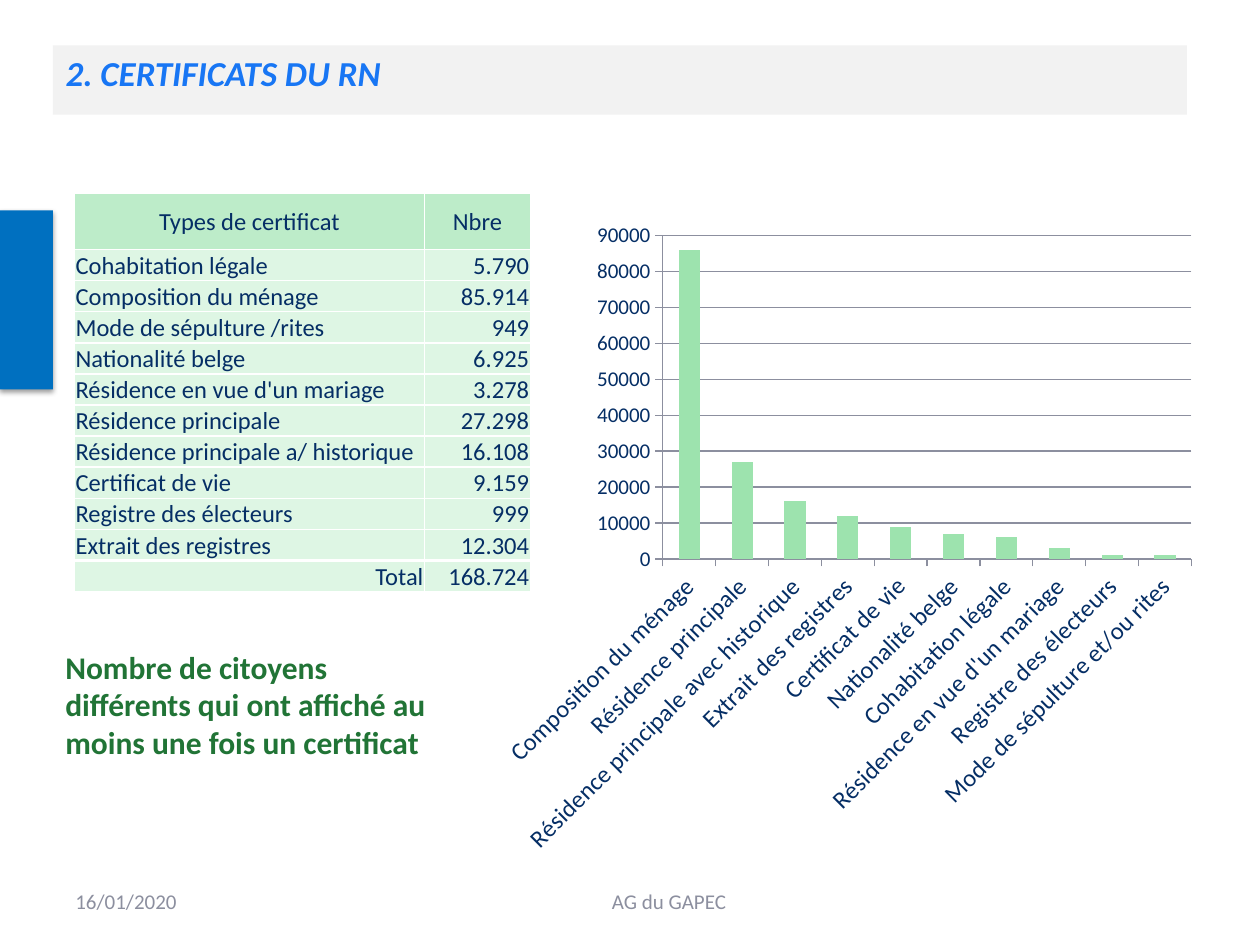
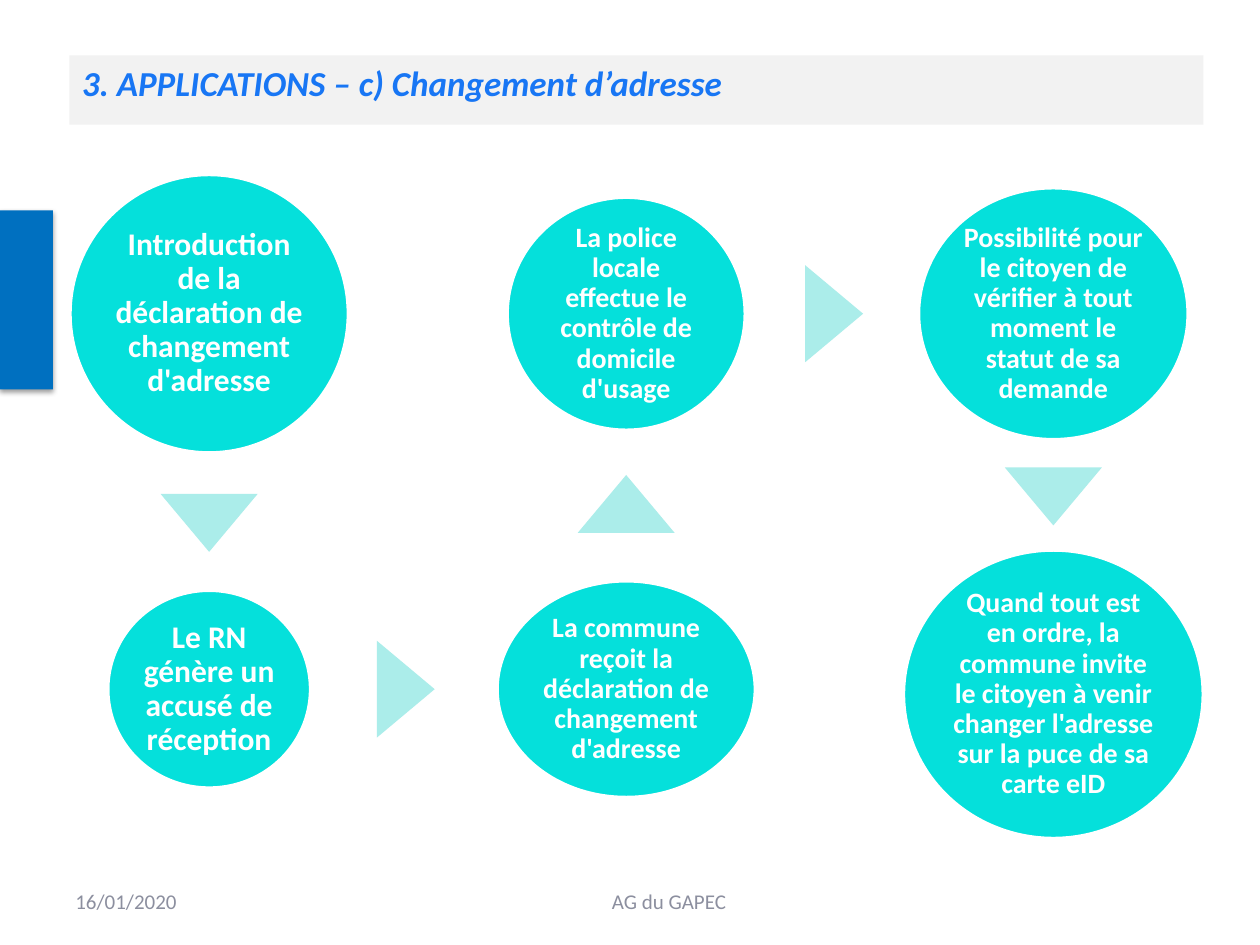
"""Builds two slides on register certificates and the change of address procedure."""
from lxml.etree import SubElement
from pptx import Presentation
from pptx.chart.data import CategoryChartData
from pptx.dml.color import RGBColor
from pptx.enum.chart import XL_CHART_TYPE, XL_TICK_MARK
from pptx.enum.shapes import MSO_SHAPE
from pptx.enum.text import MSO_ANCHOR, MSO_AUTO_SIZE, PP_ALIGN
from pptx.oxml import parse_xml
from pptx.oxml.ns import nsdecls, qn
from pptx.util import Inches, Pt

COLORS = {
    "title": "1876F4", "band": "F2F2F2", "tab": "0070C0", "footer": "8C8F9F",
    "ink": "052E65", "head": "BDECC9", "row": "DEF6E4", "bar": "9DE3AE",
    "note": "217436", "step": "05E0DB", "arrow": "ABEDEA", "white": "FFFFFF",
}
CERTIFICATES = [
    ("Cohabitation légale", "5.790"),
    ("Composition du ménage", "85.914"),
    ("Mode de sépulture /rites", "949"),
    ("Nationalité belge", "6.925"),
    ("Résidence en vue d'un mariage", "3.278"),
    ("Résidence principale", "27.298"),
    ("Résidence principale a/ historique", "16.108"),
    ("Certificat de vie", "9.159"),
    ("Registre des électeurs", "999"),
    ("Extrait des registres", "12.304"),
]
CHART_VALUES = {
    "Composition du ménage": 86000,
    "Résidence principale": 27000,
    "Résidence principale avec historique": 16000,
    "Extrait des registres": 12000,
    "Certificat de vie": 9000,
    "Nationalité belge": 7000,
    "Cohabitation légale": 6000,
    "Résidence en vue d'un mariage": 3000,
    "Registre des électeurs": 1000,
    "Mode de sépulture et/ou rites": 1000,
}
LEFT, MIDDLE, RIGHT = 1.66, 4.97, 8.36
TOP, BOTTOM = 2.49, 5.47
STEPS = [
    (LEFT, TOP, 2.21, 2.21, 18, "Introduction de la déclaration de changement d'adresse"),
    (LEFT, BOTTOM, 1.61, 1.57, 18, "Le RN génère un accusé de réception"),
    (MIDDLE, BOTTOM, 2.05, 1.72, 16, "La commune reçoit la déclaration de changement d'adresse"),
    (MIDDLE, TOP, 1.89, 1.85, 16, "La police locale effectue le contrôle de domicile d'usage"),
    (RIGHT, TOP, 2.14, 2, 16,
     "Possibilité pour le citoyen de vérifier à tout moment le statut de sa demande"),
    (RIGHT, 5.51, 2.38, 2.29, 16,
     "Quand tout est en ordre, la commune invite le citoyen à venir "
     "changer l'adresse sur la puce de sa carte eID"),
]
ARROWS = [
    (LEFT, 4.15, 180), (3.22, BOTTOM, 90), (MIDDLE, 4, 0),
    (6.62, TOP, 90), (RIGHT, 3.94, 180),
]


def rgb(key):
    """Return the palette colour of that name."""
    return RGBColor.from_string(COLORS[key])


def apply(target, **values):
    """Set each given attribute on the target."""
    for name, value in values.items():
        setattr(target, name, value)


def set_font(font, size, color, **styles):
    """Give a font the deck's typeface, a size, a colour and styles."""
    apply(font, name="Calibri", size=Pt(size), **styles)
    font.color.rgb = rgb(color)


def write(frame, text, size, color, align=PP_ALIGN.LEFT, **styles):
    """Write one formatted paragraph into a text frame."""
    apply(frame, word_wrap=True, auto_size=MSO_AUTO_SIZE.NONE)
    paragraph = frame.paragraphs[0]
    paragraph.alignment = align
    run = paragraph.add_run()
    run.text = text
    set_font(run.font, size, color, **styles)
    return paragraph


def add_text(slide, box, text, size, color, anchor=MSO_ANCHOR.MIDDLE, **format_values):
    """Add a text box with one paragraph."""
    frame = slide.shapes.add_textbox(*map(Inches, box)).text_frame
    frame.vertical_anchor = anchor
    write(frame, text, size, color, **format_values)


def add_filled(slide, kind, box, color):
    """Add a flat preset shape without outline."""
    shape = slide.shapes.add_shape(kind, *map(Inches, box))
    shape.shadow.inherit = False
    shape.fill.solid()
    shape.fill.fore_color.rgb = rgb(color)
    shape.line.fill.background()
    return shape


def add_centred(slide, kind, x, y, width, height, color):
    """Add a flat shape around a centre point."""
    return add_filled(slide, kind, (x - width / 2, y - height / 2, width, height), color)


def add_base_slide(deck, title, left, top):
    """Add a slide with title band, side tab and footers."""
    slide = deck.slides.add_slide(deck.slide_layouts[5])
    band = slide.shapes.title
    apply(band, left=Inches(left), top=Inches(top), width=Inches(9), height=Inches(0.55))
    band.fill.solid()
    band.fill.fore_color.rgb = rgb("band")
    band.text_frame.vertical_anchor = MSO_ANCHOR.TOP
    write(band.text_frame, title, 20, "title", bold=True, italic=True)

    tab = add_filled(slide, MSO_SHAPE.RECTANGLE, (0, 1.67, 0.42, 1.42), "tab")
    effects = tab._element.spPr.find(qn("a:effectLst"))
    effects.append(parse_xml(
        f'<a:outerShdw {nsdecls("a")} blurRad="{Pt(3.1)}" dist="{Pt(1.6)}" dir="5400000" '
        'rotWithShape="0"><a:srgbClr val="000000"><a:alpha val="38000"/></a:srgbClr>'
        '</a:outerShdw>'))

    add_text(slide, (0.5, 6.95, 2.33, 0.4), "16/01/2020", 12, "footer")
    add_text(slide, (2.95, 6.95, 4.72, 0.4), "AG du GAPEC", 12, "footer",
             align=PP_ALIGN.CENTER)
    return slide


def add_borders(cell, top, bottom):
    """Draw white borders round a cell, with given top and bottom widths."""
    properties = cell._tc.get_or_add_tcPr()
    widths = {"lnL": 1, "lnR": 1, "lnT": top, "lnB": bottom}
    for position, (side, width) in enumerate(widths.items()):
        properties.insert(position, parse_xml(
            f'<a:{side} {nsdecls("a")} w="{Pt(width)}"><a:solidFill>'
            f'<a:srgbClr val="{COLORS["white"]}"/></a:solidFill></a:{side}>'))


def add_certificate_table(slide):
    """Add the table of certificate counts."""
    rows = [("Types de certificat", "Nbre"), *CERTIFICATES, ("Total", "168.724")]
    last = len(rows) - 1
    table = slide.shapes.add_table(
        len(rows), 2, *map(Inches, (0.59, 1.53, 3.62, 3.11))).table
    apply(table, first_row=False, horz_banding=False)
    for column, width in zip(table.columns, (2.78, 0.84)):
        column.width = Inches(width)
    margins = dict.fromkeys(("margin_left", "margin_right", "margin_top"), Inches(0.01))
    for r, row in enumerate(rows):
        table.rows[r].height = Inches(0.23 if r else 0.45)
        for c, text in enumerate(row):
            cell = table.cell(r, c)
            apply(cell, margin_bottom=0, **margins,
                  vertical_anchor=MSO_ANCHOR.BOTTOM if r else MSO_ANCHOR.MIDDLE)
            cell.fill.solid()
            cell.fill.fore_color.rgb = rgb("row" if r else "head")
            add_borders(cell, 2.25 if r == last else 1, 2.25 if r == last - 1 else 1)
            if r == 0:
                align = PP_ALIGN.CENTER
            else:
                align = PP_ALIGN.RIGHT if c or r == last else PP_ALIGN.LEFT
            paragraph = cell.text_frame.paragraphs[0]
            paragraph.text = text
            paragraph.alignment = align
            set_font(paragraph.runs[0].font, 14, "ink")


def set_plot_layout(chart, **fractions):
    """Place the inner plot area by fractions of the chart."""
    plot_area = chart._chartSpace.chart.plotArea
    layout = plot_area.find(qn("c:layout"))
    if layout is None:
        layout = parse_xml(f'<c:layout {nsdecls("c")}/>')
        plot_area.insert(0, layout)
    manual = SubElement(layout, qn("c:manualLayout"))
    settings = {"layoutTarget": "inner", "xMode": "edge", "yMode": "edge", **fractions}
    for name, value in settings.items():
        SubElement(manual, qn(f"c:{name}")).set("val", str(value))


def add_certificate_chart(slide):
    """Add the column chart of certificates by type."""
    data = CategoryChartData()
    data.categories = list(CHART_VALUES)
    data.add_series("Series 1", list(CHART_VALUES.values()))
    chart = slide.shapes.add_chart(
        XL_CHART_TYPE.COLUMN_CLUSTERED, *map(Inches, (3.9, 1.66, 5.67, 5.24)), data).chart
    apply(chart, has_legend=False, has_title=False)
    set_font(chart.font, 12, "ink")
    set_plot_layout(chart, x=0.24, y=0.04, w=0.74, h=0.49)

    plot = chart.plots[0]
    apply(plot, gap_width=150, vary_by_categories=False)
    bars = plot.series[0].format.fill
    bars.solid()
    bars.fore_color.rgb = rgb("bar")

    types, counts = chart.category_axis, chart.value_axis
    apply(counts, minimum_scale=0, maximum_scale=90000, major_unit=10000,
          has_major_gridlines=True)
    for axis, size in ((types, 14), (counts, 12)):
        axis.major_tick_mark = XL_TICK_MARK.OUTSIDE
        set_font(axis.tick_labels.font, size, "ink")
        axis.format.line.color.rgb = rgb("footer")
    counts.major_gridlines.format.line.color.rgb = rgb("footer")
    types._element.find(qn("c:txPr")).find(qn("a:bodyPr")).set("rot", "-2700000")


def add_step(slide, x, y, width, height, size, text):
    """Add one round step of the procedure."""
    step = add_centred(slide, MSO_SHAPE.OVAL, x, y, width, height, "step")
    step.line.color.rgb = rgb("white")
    step.line.width = Pt(2)
    frame = step.text_frame
    sides = ("margin_left", "margin_right", "margin_top", "margin_bottom")
    apply(frame, vertical_anchor=MSO_ANCHOR.MIDDLE, **dict.fromkeys(sides, Inches(0.02)))
    paragraph = write(frame, text, size, "white", PP_ALIGN.CENTER, bold=True)
    paragraph.line_spacing = 0.9


def add_arrow(slide, x, y, rotation):
    """Add a triangle that points to the next step."""
    arrow = add_centred(slide, MSO_SHAPE.ISOSCELES_TRIANGLE, x, y, 0.77, 0.46, "arrow")
    arrow.rotation = rotation


def main():
    """Build and save the deck."""
    deck = Presentation()
    apply(deck, slide_width=Inches(10), slide_height=Inches(7.5))

    certificates = add_base_slide(deck, "2. CERTIFICATS DU RN", 0.42, 0.36)
    add_certificate_table(certificates)
    add_certificate_chart(certificates)
    add_text(certificates, (0.42, 5.09, 3.31, 1.01),
             "Nombre de citoyens différents qui ont affiché au moins une fois un certificat",
             18, "note", anchor=MSO_ANCHOR.TOP, bold=True)

    address = add_base_slide(deck, "3. APPLICATIONS – c) Changement d’adresse", 0.55, 0.44)
    for step in STEPS:
        add_step(address, *step)
    for arrow in ARROWS:
        add_arrow(address, *arrow)

    deck.save("out.pptx")


if __name__ == "__main__":
    main()
